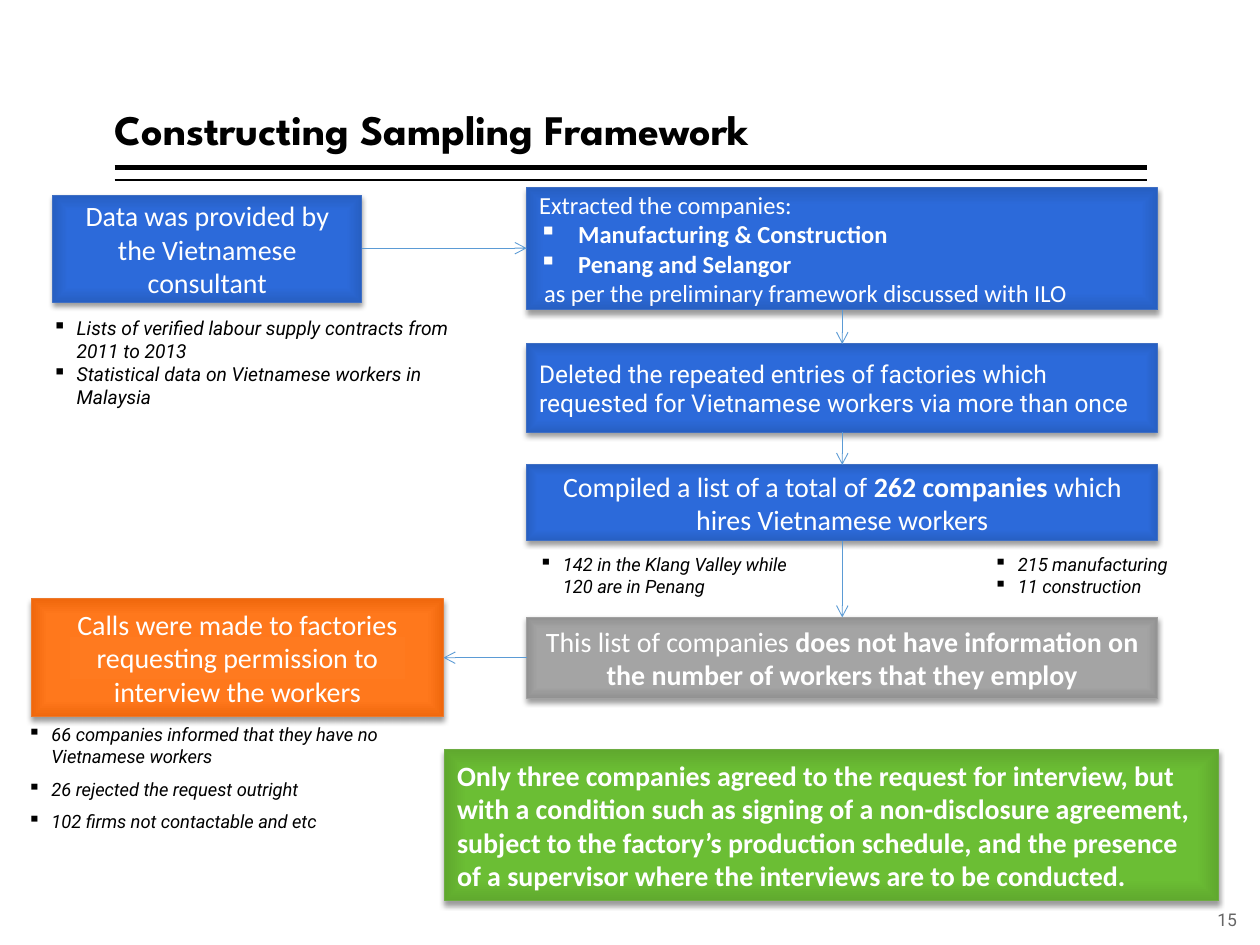
from dataclasses import dataclass

from lxml import etree
from pptx import Presentation, util as u
from pptx.dml.color import RGBColor
from pptx.enum import shapes, text
from pptx.oxml.ns import qn

# The grid: 100 columns by 75 rows of equal squares
COLUMNS, ROWS = 100, 75
WIDTH, HEIGHT = u.Inches(10), u.Inches(7.5)
LEFT, CENTER = text.PP_ALIGN.LEFT, text.PP_ALIGN.CENTER
TOP, MIDDLE, BOTTOM = text.MSO_ANCHOR.TOP, text.MSO_ANCHOR.MIDDLE, text.MSO_ANCHOR.BOTTOM
BULLET, BOLD = "▪ ", "**"  # markers: bulleted paragraph, bold span


@dataclass(frozen=True)
class Area:
    column: float
    row: float
    columns: float
    rows: float

    @property
    def right(self) -> float:
        return self.column + self.columns

    @property
    def bottom(self) -> float:
        return self.row + self.rows

    @property
    def center(self) -> float:
        return self.column + self.columns / 2


@dataclass(frozen=True)
class Palette:
    middle: str
    body: str
    rim: str
    outline: str


@dataclass(frozen=True)
class Step:
    area: Area
    palette: Palette
    lines: tuple[str, ...]
    size: float = 16
    font: str = "Calibri"
    align: int = CENTER


@dataclass(frozen=True)
class Note:
    area: Area
    lines: tuple[str, ...]
    size: float = 10.5
    after: float = 0


BLUE = Palette("2C6BDC", "2C6ADA", "275FC2", "3F6FC3")
GREY = Palette("A5A5A5", "A4A4A4", "929292", "A1A1A1")
ORANGE = Palette("FF7A1F", "FF781C", "F0680D", "EC792B")
GREEN = Palette("6CC034", "6BBE34", "60A92E", "6DAC43")

# Flow steps: the right-hand stack shares one column span
STACK, SPAN = 41.8, 50.1
DATA = Step(Area(4.2, 15.5, 24.5, 8.5), BLUE,
            ("Data was provided by the Vietnamese consultant",))
EXTRACT = Step(Area(STACK, 14.9, SPAN, 9.7), BLUE, (
    "Extracted the companies:",
    "▪ **Manufacturing & Construction**",
    "▪ **Penang and Selangor**",
    "as per the preliminary framework discussed with ILO"), 14, align=LEFT)
DELETE = Step(Area(STACK, 27.3, SPAN, 7), BLUE, (
    "Deleted the repeated entries of factories which requested for "
    "Vietnamese workers via more than once",), 14, "Roboto", LEFT)
COMPILE = Step(Area(STACK, 36.9, SPAN, 6), BLUE, (
    "Compiled a list of a total of **262 companies **which hires Vietnamese workers",))
MISSING = Step(Area(STACK, 49, SPAN, 6.4), GREY, (
    "This list of companies **does not have information on the number of "
    "workers that they employ**",))
CALLS = Step(Area(2.5, 47.5, 32.7, 9.4), ORANGE, (
    "Calls were made to factories requesting permission to interview the workers",))
RESULT = Step(Area(35.3, 59.5, 61.4, 12), GREEN, (
    "**Only three companies agreed to the request for interview, but with a condition "
    "such as signing of a non-disclosure agreement, subject to the factory’s production "
    "schedule, and the presence of a supervisor where the interviews are to be "
    "conducted.**",), align=LEFT)
STACKED = (EXTRACT, DELETE, COMPILE, MISSING)

NOTES = (
    Note(Area(3.2, 24.6, 37.1, 8.4), (
        "▪ Lists of verified labour supply contracts from 2011 to 2013",
        "▪ Statistical data on Vietnamese workers in Malaysia"), 11),
    Note(Area(77.9, 43.4, 22.1, 4.7), ("▪ 215 manufacturing", "▪ 11 construction")),
    Note(Area(STACK, 43.4, 22, 4.7), ("▪ 142 in the Klang Valley while 120 are in Penang",)),
    Note(Area(1.2, 56.9, 34.1, 9.8), (
        "▪ 66 companies informed that they have no Vietnamese workers",
        "▪ 26 rejected the request outright",
        "▪ 102 firms not contactable and etc"), after=6),
)


def across(columns: float) -> int:
    return round(WIDTH * columns / COLUMNS)


def down(rows: float) -> int:
    return round(HEIGHT * rows / ROWS)


def place(area: Area) -> tuple[int, int, int, int]:
    return across(area.column), down(area.row), across(area.columns), down(area.rows)


def color(value: str) -> RGBColor:
    return RGBColor.from_string(value)


def add(parent, tag: str, **attributes):
    return etree.SubElement(parent, qn(tag), {k: str(v) for k, v in attributes.items()})


def write(shape, lines, *, size, font="Roboto", fill="000000", align=LEFT, anchor=TOP,
          italic=False, after=0, hang=1.9, inset=1.0, spacing=None, last_indent=0.0):
    """Fill a shape with paragraphs, honouring the bullet and bold markers."""
    frame = shape.text_frame
    frame.word_wrap, frame.vertical_anchor = True, anchor
    frame.margin_left = frame.margin_right = across(inset)
    for index, line in enumerate(lines):
        para = frame.paragraphs[0] if index == 0 else frame.add_paragraph()
        para.alignment, para.line_spacing = align, spacing
        if after:
            para.space_after = u.Pt(after)
        properties = para._p.get_or_add_pPr()
        if line.startswith(BULLET):
            properties.set("marL", str(across(hang)))
            properties.set("indent", str(-across(hang)))
            add(properties, "a:buChar", char=BULLET.strip())
        elif last_indent and index == len(lines) - 1:
            properties.set("marL", str(across(last_indent)))
        for part, words in enumerate(line.removeprefix(BULLET).split(BOLD)):
            if words:
                span = para.add_run()
                span.text = words
                span.font.size, span.font.name = u.Pt(size), font
                span.font.bold, span.font.italic = part % 2 == 1, italic
                span.font.color.rgb = color(fill)


def shade(shape, palette: Palette) -> None:
    """Gradient from the middle to the rim, with a soft shadow below."""
    shape.fill.gradient()
    gradient = shape._element.spPr.find(qn("a:gradFill"))
    for child in list(gradient):
        gradient.remove(child)
    stops = add(gradient, "a:gsLst")
    for position, value in ((0, palette.middle), (71, palette.body), (100, palette.rim)):
        add(add(stops, "a:gs", pos=position * 1000), "a:srgbClr", val=value)
    add(add(gradient, "a:path", path="rect"), "a:fillToRect",
        l=50000, t=50000, r=50000, b=50000)
    shape.line.color.rgb, shape.line.width = color(palette.outline), u.Pt(0.5)
    shape.shadow.inherit = False
    effects = shape._element.spPr.find(qn("a:effectLst"))
    shadow = add(effects, "a:outerShdw", blurRad=u.Pt(3.1), dist=u.Pt(2),
                 dir=90 * 60000, rotWithShape=0)
    add(add(shadow, "a:srgbClr", val="000000"), "a:alpha", val=38000)


def draw_step(page, step: Step) -> None:
    box = page.shapes.add_shape(shapes.MSO_SHAPE.RECTANGLE, *place(step.area))
    shade(box, step.palette)
    write(box, step.lines, size=step.size, font=step.font, fill="FFFFFF", align=step.align,
          anchor=MIDDLE, hang=3.1, last_indent=0.4 if len(step.lines) > 1 else 0)


def draw_text(page, area: Area, *lines: str, **style) -> None:
    write(page.shapes.add_textbox(*place(area)), lines, **style)


def draw_line(page, start, end, value="5B9BD5", width=0.5, arrow=True) -> None:
    line = page.shapes.add_connector(shapes.MSO_CONNECTOR.STRAIGHT, across(start[0]),
                                     down(start[1]), across(end[0]), down(end[1]))
    line.line.color.rgb, line.line.width = color(value), u.Pt(width)
    if arrow:
        add(line.line._get_or_add_ln(), "a:tailEnd", type="arrow")
    add(line._element.spPr, "a:effectLst")


def main() -> None:
    deck = Presentation()
    deck.slide_width, deck.slide_height = WIDTH, HEIGHT
    page = deck.slides.add_slide(deck.slide_layouts[6])

    # Title, double rule and page number
    for row, width in ((13.3, 3), (14.3, 1)):
        draw_line(page, (9.1, row), (91, row), "000000", width, arrow=False)
    draw_text(page, Area(9.1, 0.8, 80.7, 12), "**Constructing Sampling Framework**", size=24,
              font="League Spartan", anchor=BOTTOM, inset=0, spacing=0.9)
    draw_text(page, Area(94.8, 71, 5.2, 4), "15", size=10, fill="666666", align=CENTER,
              anchor=MIDDLE, inset=0)

    # Steps and their notes
    for step in (DATA, *STACKED, CALLS, RESULT):
        draw_step(page, step)
    for note in NOTES:
        draw_text(page, note.area, *note.lines, size=note.size, italic=True, after=note.after)

    # Arrows: down the stack, then in from the data and out to the calls
    for upper, lower in zip(STACKED, STACKED[1:]):
        draw_line(page, (upper.area.center, upper.area.bottom),
                  (lower.area.center, lower.area.row))
    draw_line(page, (DATA.area.right, 19.7), (STACK, 19.7))
    draw_line(page, (STACK, 52.2), (CALLS.area.right, 52.2))

    deck.save("out.pptx")


if __name__ == "__main__":
    main()
